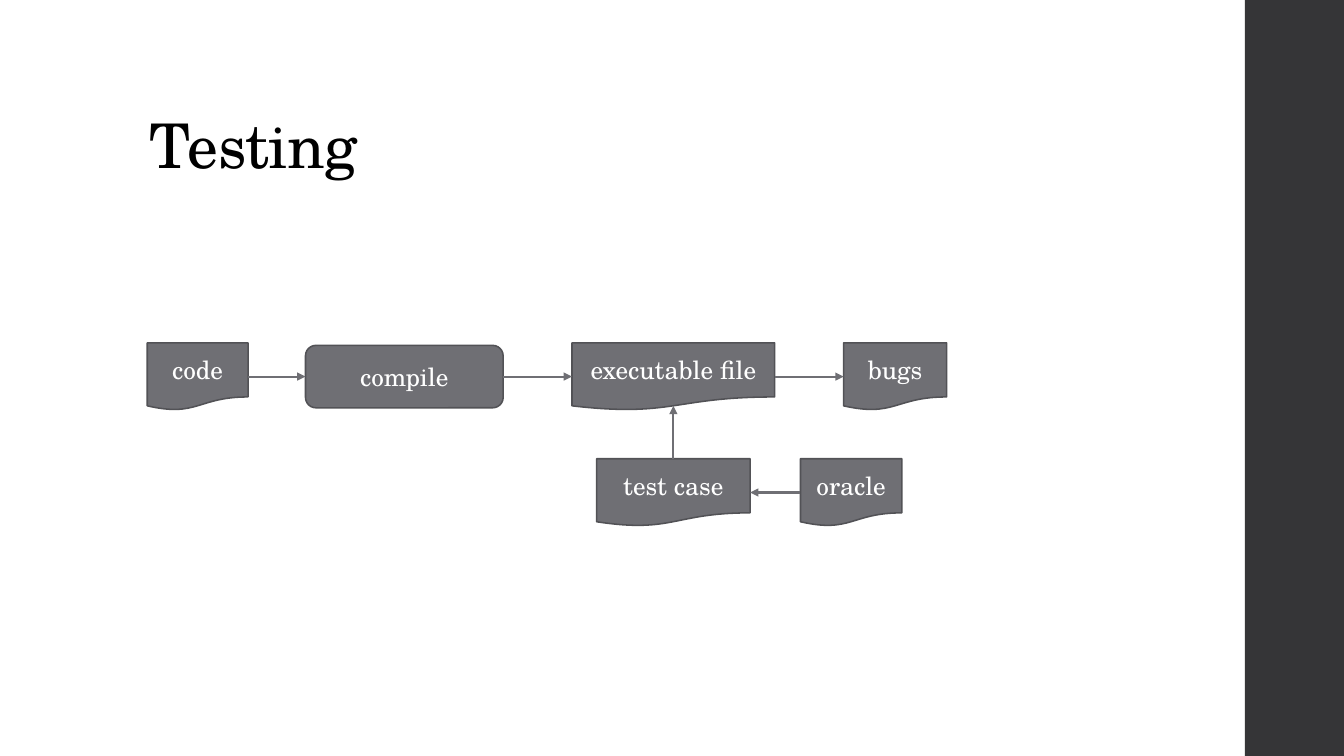
from dataclasses import dataclass

from lxml.etree import SubElement
from pptx import Presentation
from pptx.dml.color import RGBColor
from pptx.enum.shapes import MSO_CONNECTOR, MSO_SHAPE
from pptx.enum.text import MSO_ANCHOR, PP_ALIGN
from pptx.oxml.ns import qn
from pptx.shapes.autoshape import Shape
from pptx.slide import Slide
from pptx.util import Pt


@dataclass(frozen=True)
class Theme:
    font: str = "TeX Gyre Schola"
    title_size: float = 44
    node_size: float = 18
    outline_width: float = 1.1
    arrow_width: float = 1.5
    black: RGBColor = RGBColor(0x00, 0x00, 0x00)
    white: RGBColor = RGBColor(0xFF, 0xFF, 0xFF)
    sidebar: RGBColor = RGBColor(0x35, 0x35, 0x37)
    node: RGBColor = RGBColor(0x6F, 0x6F, 0x74)
    outline: RGBColor = RGBColor(0x52, 0x52, 0x56)


@dataclass(frozen=True)
class Node:
    label: str
    left: float
    middle: float
    width: float
    height: float = 48.2
    kind: MSO_SHAPE = MSO_SHAPE.FLOWCHART_DOCUMENT


@dataclass(frozen=True)
class Arrow:
    start: str
    start_side: int
    end: str
    end_side: int


THEME = Theme()
SLIDE_WIDTH, SLIDE_HEIGHT = 960, 540
SIDEBAR_LEFT = 889.2
TOP, LEFT, BOTTOM, RIGHT = range(4)
MAIN_ROW, TEST_ROW = 269, 351.8

NODES = [
    Node("code", 105.2, MAIN_ROW, 72),
    Node("compile", 218.2, MAIN_ROW, 141.2, 44.6, MSO_SHAPE.ROUNDED_RECTANGLE),
    Node("executable file", 408.6, MAIN_ROW, 144.8),
    Node("bugs", 602.6, MAIN_ROW, 73.6),
    Node("test case", 426.2, TEST_ROW, 109.6),
    Node("oracle", 571.8, TEST_ROW, 72.4),
]
ARROWS = [
    Arrow("code", RIGHT, "compile", LEFT),
    Arrow("compile", RIGHT, "executable file", LEFT),
    Arrow("executable file", RIGHT, "bugs", LEFT),
    Arrow("test case", TOP, "executable file", BOTTOM),
    Arrow("oracle", LEFT, "test case", RIGHT),
]


def write_text(shape: Shape, text: str, size: float, color: RGBColor,
               alignment: PP_ALIGN, anchor: MSO_ANCHOR) -> None:
    frame = shape.text_frame
    frame.word_wrap = True
    frame.vertical_anchor = anchor
    paragraph = frame.paragraphs[0]
    paragraph.alignment = alignment
    run = paragraph.add_run()
    run.text = text
    formats = {"name": THEME.font, "size": Pt(size), "bold": False}
    for name, value in formats.items():
        setattr(run.font, name, value)
    run.font.color.rgb = color


def add_sidebar(slide: Slide) -> None:
    sidebar = slide.shapes.add_shape(
        MSO_SHAPE.RECTANGLE, Pt(SIDEBAR_LEFT), 0,
        Pt(SLIDE_WIDTH - SIDEBAR_LEFT), Pt(SLIDE_HEIGHT))
    sidebar.shadow.inherit = False
    sidebar.fill.solid()
    sidebar.fill.fore_color.rgb = THEME.sidebar
    sidebar.line.fill.background()


def add_title(slide: Slide, text: str) -> None:
    title = slide.shapes.add_textbox(Pt(99.4), Pt(28.8), Pt(763.2), Pt(104.4))
    write_text(title, text, THEME.title_size, THEME.black,
               PP_ALIGN.LEFT, MSO_ANCHOR.BOTTOM)
    paragraph = title.text_frame.paragraphs[0]
    paragraph.line_spacing = 0.9
    # Letter spacing is in hundredths of a point
    paragraph.runs[0].font._element.set("spc", "-50")


def add_node(slide: Slide, node: Node) -> Shape:
    shape = slide.shapes.add_shape(
        node.kind, Pt(node.left), Pt(node.middle - node.height / 2),
        Pt(node.width), Pt(node.height))
    shape.shadow.inherit = False
    shape.fill.solid()
    shape.fill.fore_color.rgb = THEME.node
    shape.line.color.rgb = THEME.outline
    shape.line.width = Pt(THEME.outline_width)
    write_text(shape, node.label, THEME.node_size, THEME.white,
               PP_ALIGN.CENTER, MSO_ANCHOR.MIDDLE)
    return shape


def add_arrow(slide: Slide, arrow: Arrow, shapes: dict[str, Shape]) -> None:
    connector = slide.shapes.add_connector(MSO_CONNECTOR.STRAIGHT, 0, 0, 0, 0)
    connector.begin_connect(shapes[arrow.start], arrow.start_side)
    connector.end_connect(shapes[arrow.end], arrow.end_side)
    if arrow.end_side == BOTTOM:
        # The wavy edge of a document lies above its frame
        connector.end_y = connector.end_y - Pt(3.2)
    connector.line.color.rgb = THEME.node
    connector.line.width = Pt(THEME.arrow_width)
    properties = connector._element.spPr
    SubElement(properties.find(qn("a:ln")), qn("a:tailEnd"), type="triangle")
    SubElement(properties, qn("a:effectLst"))


def main() -> None:
    presentation = Presentation()
    presentation.slide_width = Pt(SLIDE_WIDTH)
    presentation.slide_height = Pt(SLIDE_HEIGHT)
    slide = presentation.slides.add_slide(presentation.slide_layouts[6])

    # Frame of the slide
    add_sidebar(slide)
    add_title(slide, "Testing")

    # Testing workflow
    shapes = {node.label: add_node(slide, node) for node in NODES}
    for arrow in ARROWS:
        add_arrow(slide, arrow, shapes)

    presentation.save("out.pptx")


if __name__ == "__main__":
    main()
